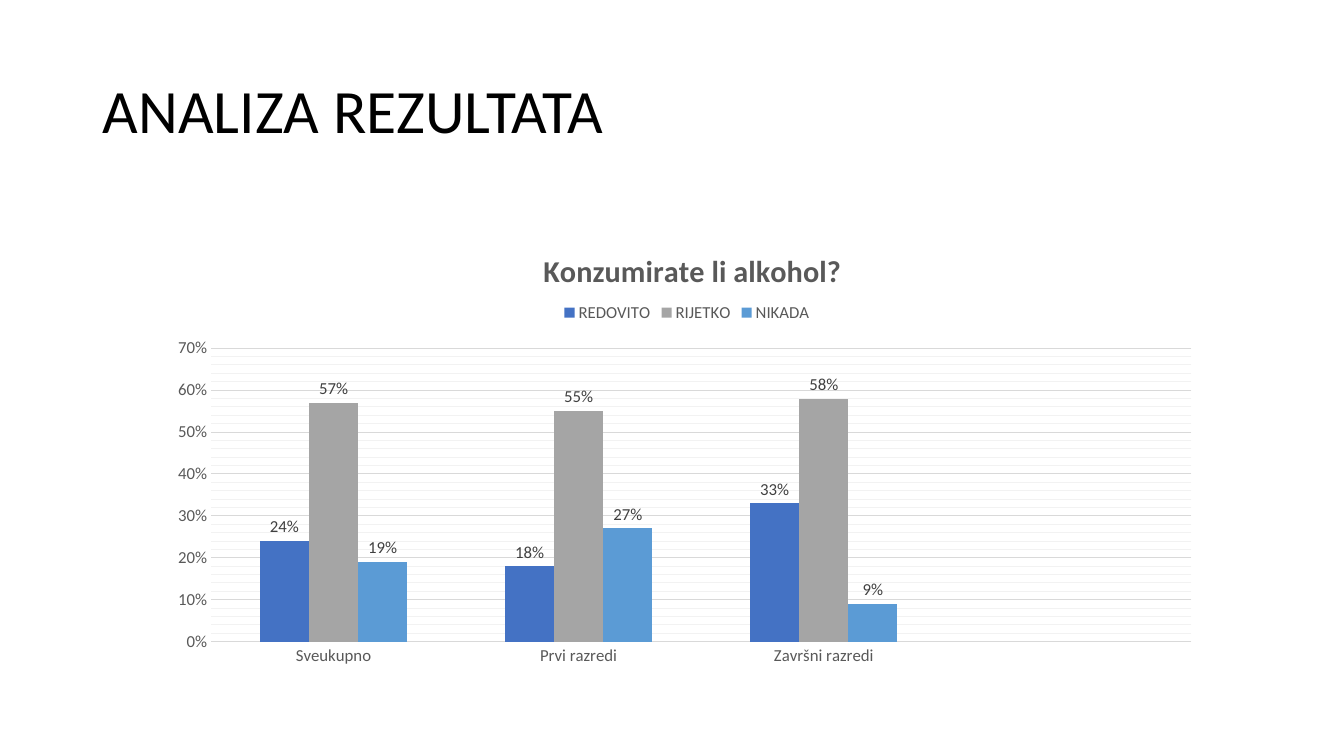
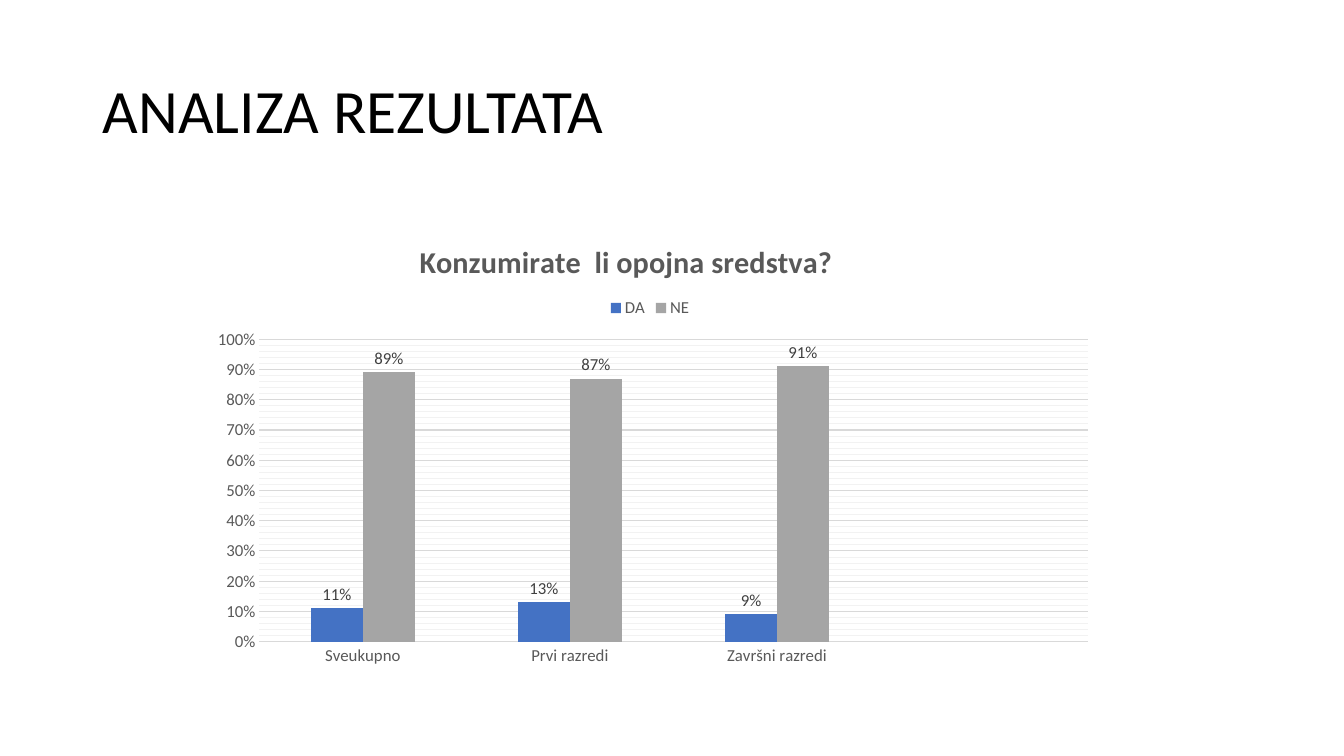
from dataclasses import dataclass

from lxml.etree import SubElement
from pptx import Presentation
from pptx.chart.data import CategoryChartData
from pptx.dml.color import RGBColor
from pptx.enum.chart import (
    XL_CHART_TYPE,
    XL_LABEL_POSITION,
    XL_LEGEND_POSITION,
    XL_TICK_MARK,
)
from pptx.enum.text import MSO_ANCHOR, PP_ALIGN
from pptx.oxml.ns import qn
from pptx.util import Cm, Pt


@dataclass(frozen=True)
class Theme:
    """Colours, font and type sizes shared by the slides."""

    font: str = "Calibri"
    title: str = "000000"
    chart_text: str = "595959"
    label: str = "404040"
    major_line: str = "D9D9D9"
    minor_line: str = "F2F2F2"
    series: tuple = ("4472C4", "A5A5A5", "5B9BD5")
    title_size: float = 44
    chart_title_size: float = 21.6
    chart_size: float = 12
    line_width: float = 0.75


@dataclass(frozen=True)
class Box:
    """A rectangle in centimetres."""

    left: float
    top: float
    width: float
    height: float

    def lengths(self):
        """Return left, top, width and height as lengths."""
        return Cm(self.left), Cm(self.top), Cm(self.width), Cm(self.height)


@dataclass(frozen=True)
class Survey:
    """One survey question with its answers and chart arrangement."""

    question: str
    answers: dict
    box: Box
    maximum: float
    title_place: tuple
    legend_place: tuple
    plot_place: tuple


THEME = Theme()
SLIDE_TITLE = "ANALIZA REZULTATA"
TITLE_BOX = Box(2.34, 1.01, 29.21, 3.68)
GROUPS = ("Sveukupno", "Prvi razredi", "Završni razredi", "")
SURVEYS = (
    Survey(
        question="Konzumirate li alkohol?",
        answers={
            "REDOVITO": (0.24, 0.18, 0.33, None),
            "RIJETKO": (0.57, 0.55, 0.58, None),
            "NIKADA": (0.19, 0.27, 0.09, None),
        },
        box=Box(3.99, 5.59, 26.57, 11.38),
        maximum=0.7,
        title_place=(0.36, 0.05),
        legend_place=(0.38, 0.17),
        plot_place=(0.05, 0.28, 0.93, 0.65),
    ),
    Survey(
        question="Konzumirate  li opojna sredstva?",
        answers={
            "DA": (0.11, 0.13, 0.09, None),
            "NE": (0.89, 0.87, 0.91, None),
        },
        box=Box(4.93, 5.59, 22.94, 11.38),
        maximum=1,
        title_place=(0.24, 0.03),
        legend_place=(0.45, 0.16),
        plot_place=(0.07, 0.26, 0.91, 0.67),
    ),
)


def format_font(font, size, color, bold=False):
    """Set the typeface, size, colour and weight of a font."""
    font.name = THEME.font
    font.size = Pt(size)
    font.bold = bold
    font.color.rgb = RGBColor.from_string(color)


def write_text(text_frame, text, *, size, color, bold=False, align=None, spacing=None):
    """Write one formatted paragraph into a text frame."""
    text_frame.text = text
    paragraph = text_frame.paragraphs[0]
    paragraph.alignment = align
    paragraph.line_spacing = spacing
    format_font(paragraph.runs[0].font, size, color, bold)


def format_line(line, color):
    """Give a line the shared width and a colour."""
    line.color.rgb = RGBColor.from_string(color)
    line.width = Pt(THEME.line_width)


def format_minor_gridlines(chart, color):
    """Give the minor gridlines the shared width and a colour."""
    gridlines = chart._chartSpace.find(".//" + qn("c:minorGridlines"))
    properties = SubElement(gridlines, qn("c:spPr"))
    line = SubElement(properties, qn("a:ln"), w=str(int(Pt(THEME.line_width))))
    fill = SubElement(line, qn("a:solidFill"))
    SubElement(fill, qn("a:srgbClr"), val=color)


def place_part(chart, tag, place):
    """Place a chart part at fractions of the chart's own box."""
    part = chart._chartSpace.find(".//" + qn(tag))
    for old_layout in part.findall(qn("c:layout")):
        part.remove(old_layout)
    layout = SubElement(part, qn("c:layout"))
    overlay = part.find(qn("c:overlay"))
    if overlay is None:
        part.insert(0, layout)
    else:
        overlay.addprevious(layout)
    manual = SubElement(layout, qn("c:manualLayout"))
    settings = [("xMode", "edge"), ("yMode", "edge"), *zip("xywh", place)]
    if len(place) == 4:
        settings.insert(0, ("layoutTarget", "inner"))
    for name, value in settings:
        SubElement(manual, qn("c:" + name)).set("val", str(value))


def add_title(slide, box):
    """Move and format the slide's title placeholder."""
    title = slide.shapes.title
    title.left, title.top, title.width, title.height = box.lengths()
    title.text_frame.word_wrap = True
    title.text_frame.vertical_anchor = MSO_ANCHOR.MIDDLE
    write_text(
        title.text_frame,
        SLIDE_TITLE,
        size=THEME.title_size,
        color=THEME.title,
        align=PP_ALIGN.LEFT,
        spacing=0.9,
    )


def format_axes(chart, maximum):
    """Format both axes and the gridlines."""
    category_axis, value_axis = chart.category_axis, chart.value_axis
    for axis in (category_axis, value_axis):
        axis.major_tick_mark = axis.minor_tick_mark = XL_TICK_MARK.NONE
        format_font(axis.tick_labels.font, THEME.chart_size, THEME.chart_text)
    format_line(category_axis.format.line, THEME.major_line)
    value_axis.format.line.fill.background()
    value_axis.minimum_scale = 0
    value_axis.maximum_scale = maximum
    value_axis.major_unit = 0.1
    value_axis.minor_unit = 0.02
    value_axis.has_major_gridlines = value_axis.has_minor_gridlines = True
    format_line(value_axis.major_gridlines.format.line, THEME.major_line)
    format_minor_gridlines(chart, THEME.minor_line)
    value_axis.tick_labels.number_format = "0%"
    value_axis.tick_labels.number_format_is_linked = False


def format_series(plot):
    """Colour the columns and label their values."""
    plot.gap_width = 199
    plot.overlap = 0
    plot.vary_by_categories = False
    for series, color in zip(plot.series, THEME.series):
        series.format.fill.solid()
        series.format.fill.fore_color.rgb = RGBColor.from_string(color)
        series.invert_if_negative = False
        labels = series.data_labels
        labels.show_value = True
        labels.number_format = "0%"
        labels.number_format_is_linked = False
        labels.position = XL_LABEL_POSITION.OUTSIDE_END
        format_font(labels.font, THEME.chart_size, THEME.label)


def add_survey_chart(slide, survey, box):
    """Add the column chart of one survey question."""
    chart_data = CategoryChartData(number_format="0%")
    chart_data.categories = GROUPS
    for answer, shares in survey.answers.items():
        chart_data.add_series(answer, shares)
    chart = slide.shapes.add_chart(
        XL_CHART_TYPE.COLUMN_CLUSTERED, *box.lengths(), chart_data
    ).chart
    format_font(chart.font, THEME.chart_size, THEME.chart_text)
    chart.has_title = True
    write_text(
        chart.chart_title.text_frame,
        survey.question,
        size=THEME.chart_title_size,
        color=THEME.chart_text,
        bold=True,
    )
    chart.has_legend = True
    chart.legend.position = XL_LEGEND_POSITION.TOP
    chart.legend.include_in_layout = False
    format_font(chart.legend.font, THEME.chart_size, THEME.chart_text)
    format_axes(chart, survey.maximum)
    format_series(chart.plots[0])
    place_part(chart, "c:title", survey.title_place)
    place_part(chart, "c:legend", survey.legend_place)
    place_part(chart, "c:plotArea", survey.plot_place)


def add_survey_slide(presentation, survey):
    """Add a slide with the shared title and one survey chart."""
    slide = presentation.slides.add_slide(presentation.slide_layouts[5])
    add_title(slide, TITLE_BOX)
    add_survey_chart(slide, survey, survey.box)


def main():
    """Build and save the presentation."""
    presentation = Presentation()
    presentation.slide_width = Cm(33.87)
    presentation.slide_height = Cm(19.05)
    for survey in SURVEYS:
        add_survey_slide(presentation, survey)
    presentation.save("out.pptx")


if __name__ == "__main__":
    main()
